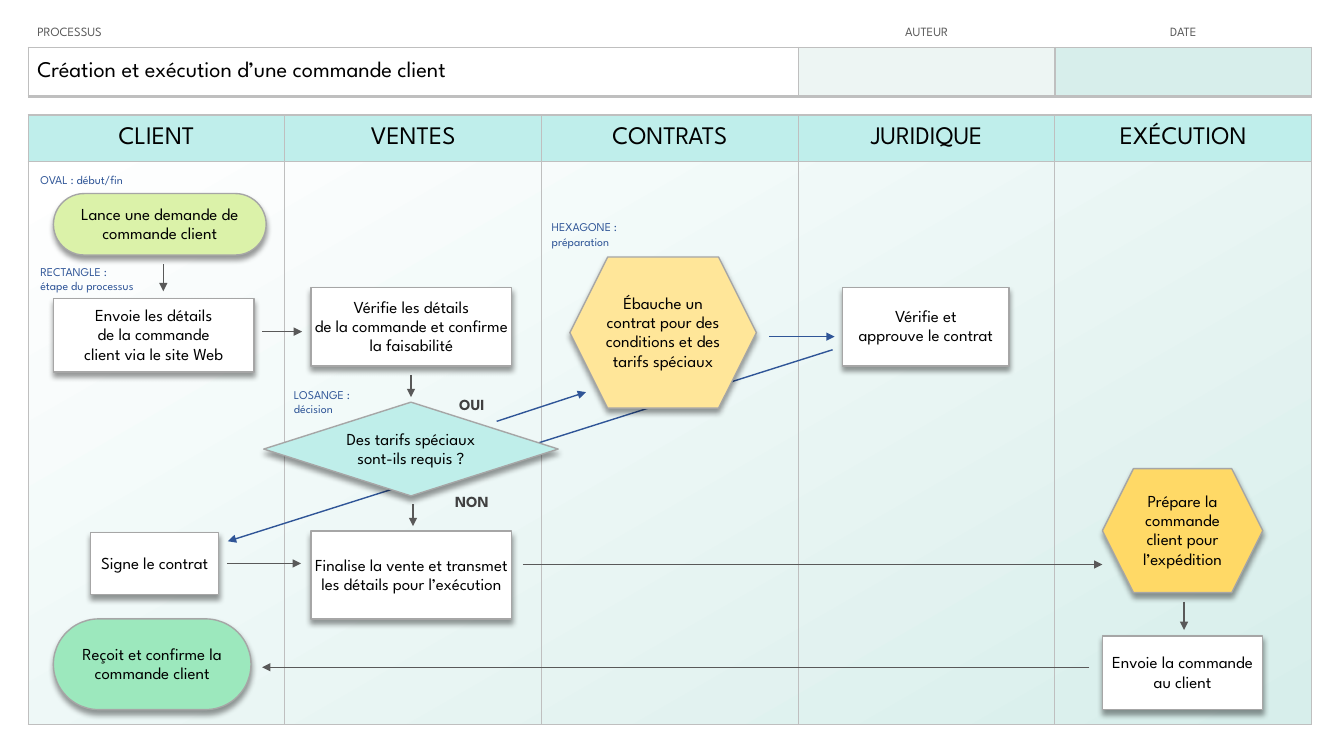
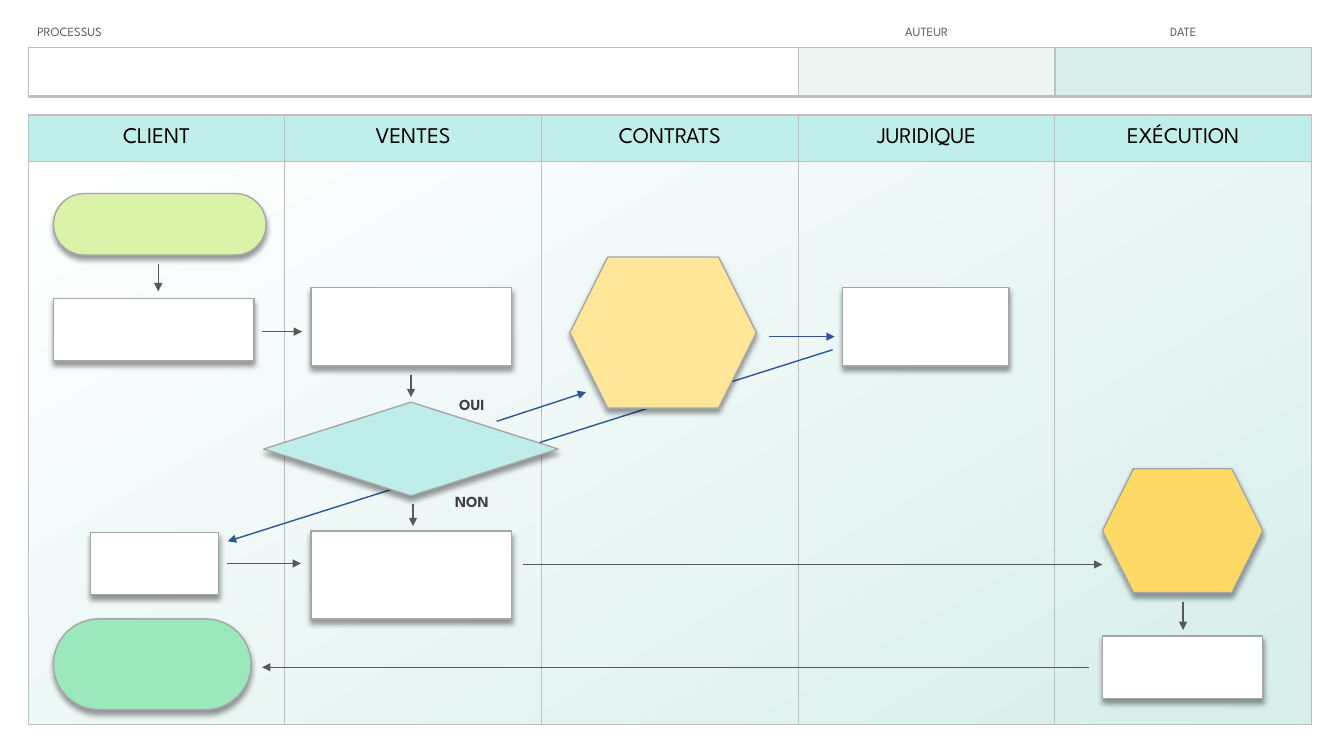
from lxml import etree
from pptx import Presentation
from pptx import util as u
from pptx.dml.color import RGBColor
from pptx.enum import shapes, text
from pptx.oxml.ns import qn

FONT = "League Spartan"
BLACK, WHITE, GREY, BLUE = "000000", "FFFFFF", "595959", "2F5597"
RULE, OUTLINE, HEADER, MIST, PALE = "BFBFBF", "A6A6A6", "BFEEEB", "EDF5F3", "D7EEEB"
LEFT, LANE = 0.28, 2.546
LANES = [LEFT + LANE * i for i in range(5)]
CENTER, START = text.PP_ALIGN.CENTER, text.PP_ALIGN.LEFT
KIND = shapes.MSO_SHAPE
BOX, OVAL, HEXAGON = KIND.FLOWCHART_PROCESS, KIND.ROUNDED_RECTANGLE, KIND.HEXAGON


def paint(fill, colour):
    fill.solid()
    fill.fore_color.rgb = RGBColor.from_string(colour)


def write(tf, words, size, colour, align=CENTER, bold=False, spacing=None):
    tf.text = words
    for p in tf.paragraphs:
        p.alignment = align
        p.line_spacing = spacing
        for r in p.runs:
            r.font.name, r.font.size, r.font.bold = FONT, u.Pt(size), bold
            paint(r.font.fill, colour)


prs = Presentation()
prs.slide_width, prs.slide_height = u.Inches(13.33), u.Inches(7.5)

for filled in (True, False):
    s = prs.slides.add_slide(prs.slide_layouts[6])
    step_height = 0.73 if filled else 0.62

    backdrop = s.shapes.add_shape(KIND.RECTANGLE, u.Inches(LEFT), u.Inches(1.6),
                                  u.Inches(5 * LANE), u.Inches(5.58))
    backdrop.shadow.inherit = False
    backdrop.line.fill.background()
    backdrop.fill.gradient()
    backdrop.fill.gradient_angle = 300
    for stop, colour in zip(backdrop.fill.gradient_stops, (WHITE, PALE)):
        stop.color.rgb = RGBColor.from_string(colour)

    # Tables: top, column widths in lanes, rows
    # Rows: height, texts, fills, text size, text colour, border widths
    box_rule = {"L": 1, "R": 1, "T": 1, "B": 1}
    title = "Création et exécution d’une commande client" if filled else ""
    tables = [
        (1.14, [1] * 5, [
            (0.46, ["CLIENT", "VENTES", "CONTRATS", "JURIDIQUE", "EXÉCUTION"],
             [HEADER] * 5, 18 if filled else 16, BLACK, box_rule),
            (5.59, [""] * 5, [None] * 5, 12, BLACK, box_rule)]),
        (0.19, [3, 1, 1], [
            (0.28, ["PROCESSUS", "AUTEUR", "DATE"], [None] * 3, 9, GREY, {"B": 1}),
            (0.49, [title, "", ""], [WHITE, MIST, PALE], 16, BLACK, {**box_rule, "B": 2.25})]),
    ]
    for top, widths, rows in tables:
        table = s.shapes.add_table(
            len(rows), len(widths), u.Inches(LEFT), u.Inches(top), u.Inches(5 * LANE),
            u.Inches(sum(row[0] for row in rows))).table
        table.first_row = table.horz_banding = False
        for col, width in zip(table.columns, widths):
            col.width = u.Inches(width * LANE)
        for row, (height, words, fills, size, colour, borders) in zip(table.rows, rows):
            row.height = u.Inches(height)
            for i, cell in enumerate(row.cells):
                at_start = widths[i] > 1
                cell.vertical_anchor = text.MSO_ANCHOR.MIDDLE
                cell.margin_left = u.Inches(0.09 if at_start else 0.01)
                cell.margin_right = cell.margin_top = u.Inches(0.01)
                cell.margin_bottom = 0
                write(cell.text_frame, words[i], size, colour, START if at_start else CENTER)
                for side, weight in borders.items():
                    ln = etree.SubElement(cell._tc.get_or_add_tcPr(), qn("a:ln" + side),
                                          w=str(u.Pt(weight)))
                    solid = etree.SubElement(ln, qn("a:solidFill"))
                    etree.SubElement(solid, qn("a:srgbClr"), val=RULE)
                if fills[i]:
                    paint(cell.fill, fills[i])
                else:
                    cell.fill.background()

    # Arrows: colour, then lane, offset in the lane and height of both ends
    first_x, last_x = (1.34, 1.28) if filled else (1.29, 1.27)
    arrows = [
        (BLUE, 3, 0.34, 3.47, 0, 1.98, 5.37),
        (GREY, 0, first_x, 2.62, 0, first_x, 2.89),
        (GREY, 0, 2.32, 3.29, 1, 0.17, 3.29),
        (GREY, 1, 1.25, 3.72, 1, 1.25, 3.94),
        (BLUE, 1, 2.1, 4.18, 2, 0.44, 3.89),
        (BLUE, 2, 2.26, 3.34, 3, 0.36, 3.34),
        (GREY, 1, 1.27, 5, 1, 1.27, 5.22),
        (GREY, 0, 1.97, 5.59, 1, 0.16, 5.59),
        (GREY, 1, 2.36, 5.6, 4, 0.47, 5.6),
        (GREY, 4, last_x, 5.97, 4, last_x, 6.25),
        (GREY, 4, 0.34, 6.62, 0, 2.32, 6.62),
    ]
    for colour, lane1, x1, y1, lane2, x2, y2 in arrows:
        arrow = s.shapes.add_connector(
            shapes.MSO_CONNECTOR.STRAIGHT, u.Inches(LANES[lane1] + x1), u.Inches(y1),
            u.Inches(LANES[lane2] + x2), u.Inches(y2))
        arrow.line.width = u.Pt(1)
        paint(arrow.line.fill, colour)
        etree.SubElement(arrow.line._get_or_add_ln(), qn("a:tailEnd"), type="triangle")
        etree.SubElement(arrow._element.spPr, qn("a:effectLst"))

    # Steps: kind, fill, lane, offset in the lane, top, width, height, text
    steps = [
        (OVAL, "DBF2A9", 0, 0.25, 1.92, 2.11, 0.61, "Lance une demande de commande client"),
        (BOX, WHITE, 0, 0.25, 2.96, 1.99, step_height,
         "Envoie les détails\vde la commande\vclient via le site Web"),
        (BOX, WHITE, 1, 0.26, 2.85, 1.99, 0.78,
         "Vérifie les détails\vde la commande et confirme la faisabilité"),
        (KIND.FLOWCHART_DECISION, "BFEEEA", 1, -0.21, 3.99, 2.92, 0.93,
         "Des tarifs spéciaux sont-ils requis ?"),
        (HEXAGON, "FFE699", 2, 0.28, 2.55, 1.85, 1.5,
         "Ébauche un contrat pour des conditions et des tarifs spéciaux"),
        (BOX, WHITE, 3, 0.44, 2.85, 1.65, 0.78, "Vérifie et\vapprouve le contrat"),
        (BOX, WHITE, 0, 0.62, 5.28, 1.27, 0.62, "Signe le contrat"),
        (BOX, WHITE, 1, 0.26, 5.27, 1.99, 0.87,
         "Finalise la vente et transmet les détails pour l’exécution"),
        (HEXAGON, "FFD966", 4, 0.47, 4.65, 1.59, 1.23,
         "Prépare la commande client pour l’expédition"),
        (BOX, WHITE, 4, 0.47, 6.31, 1.59, step_height, "Envoie la commande\nau client"),
        (OVAL, "9CE8BD", 0, 0.25, 6.14, 1.96, 0.9, "Reçoit et confirme la commande client"),
    ]
    for kind, colour, lane, x, y, w, h, words in steps:
        sp = s.shapes.add_shape(kind, u.Inches(LANES[lane] + x), u.Inches(y),
                                u.Inches(w), u.Inches(h))
        if kind == OVAL:
            sp.adjustments[0] = 0.5
        paint(sp.fill, colour)
        paint(sp.line.fill, OUTLINE)
        sp.line.width = u.Pt(1)
        sp.shadow.inherit = False
        shadow = etree.SubElement(
            sp._element.spPr.find(qn("a:effectLst")), qn("a:outerShdw"), blurRad=str(u.Pt(4)),
            dist=str(u.Pt(3)), dir="5400000", algn="t", rotWithShape="0")
        black = etree.SubElement(shadow, qn("a:srgbClr"), val=BLACK)
        etree.SubElement(black, qn("a:alpha"), val="40000")
        tf = sp.text_frame
        tf.margin_left = tf.margin_right = tf.margin_top = tf.margin_bottom = u.Inches(0.02)
        if filled:
            write(tf, words, 12, BLACK, spacing=0.95)

    # Labels: lane, offset in the lane, top, width, height, text
    answers = [(1, 1.49, 3.86, 0.73, 0.31, "OUI"), (1, 1.47, 4.82, 0.77, 0.31, "NON")]
    legends = [
        (0, 0.1, 1.67, 1.61, 0.23, "OVAL : début/fin"),
        (0, 0.1, 2.52, 1.48, 0.49, "RECTANGLE :\nétape du processus"),
        (1, 0.07, 3.83, 1.07, 0.31, "LOSANGE :\ndécision"),
        (2, 0.08, 2.13, 2.05, 0.39, "HEXAGONE :\npréparation"),
    ]
    for label in answers + (legends if filled else []):
        lane, x, y, w, h, words = label
        tf = s.shapes.add_textbox(u.Inches(LANES[lane] + x), u.Inches(y),
                                  u.Inches(w), u.Inches(h)).text_frame
        tf.word_wrap = True
        tf.vertical_anchor = text.MSO_ANCHOR.MIDDLE
        tf.margin_left = tf.margin_right = tf.margin_top = tf.margin_bottom = u.Inches(0.02)
        if label in answers:
            write(tf, words, 11, "404040", bold=True)
        else:
            write(tf, words, 8.5, BLUE, START)

prs.save("out.pptx")
